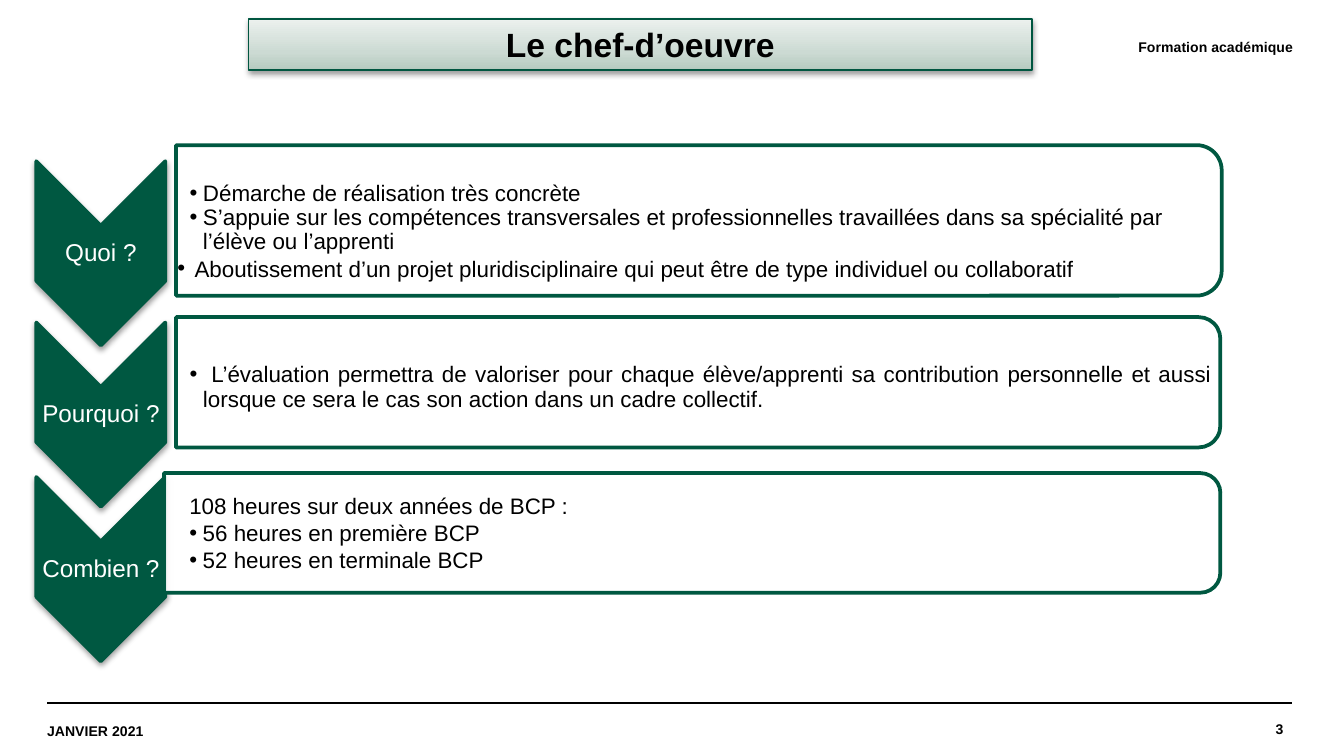
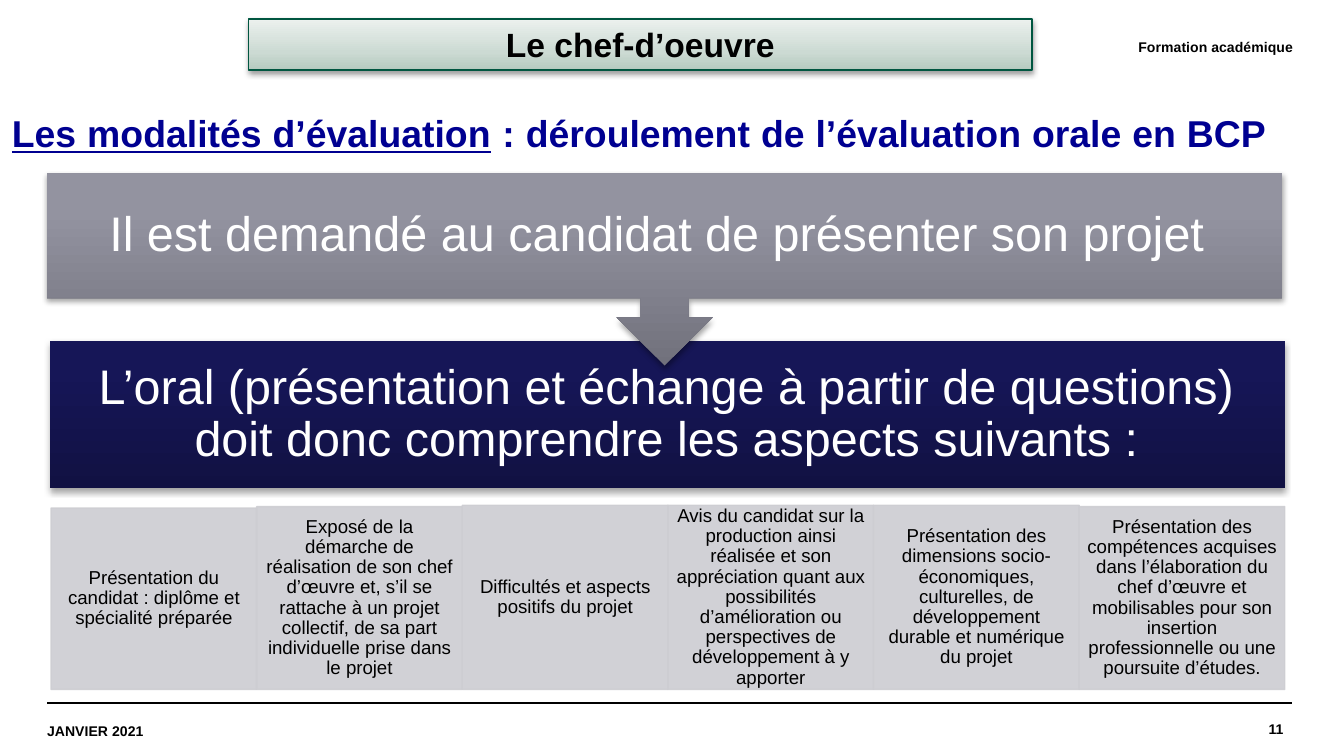
from copy import deepcopy
from dataclasses import dataclass
from typing import Any, NamedTuple, Optional

from lxml import etree
from pptx import Presentation
from pptx.dml.color import RGBColor
from pptx.enum import shapes, text
from pptx.oxml.ns import qn
from pptx.util import Emu, Pt

PX = 9144  # one px is a hundredth of an inch
SLIDE_WIDTH = 1000 * PX
SLIDE_HEIGHT = SLIDE_WIDTH * 9 // 16
SHAPE, ALIGN, ANCHOR = shapes.MSO_SHAPE, text.PP_ALIGN, text.MSO_ANCHOR


@dataclass(frozen=True)
class Theme:
    font: str = "Arial"
    black: str = "000000"
    white: str = "FFFFFF"
    green: str = "005841"
    title_edge: str = "005640"
    blue: str = "000091"
    aspect: str = "CDCDD2"
    title_fill: tuple = ((0, "B6CBC0"), (35, "CCDAD3"), (100, "ECF1EE"))
    navy_fill: tuple = ((0, "111143"), (80, "161657"), (100, "141458"))
    grey_fill: tuple = ((0, "71717C"), (80, "9393A0"), (100, "9393A1"))
    small: float = 7.5
    detail: float = 10
    body: float = 12
    label: float = 13
    title: float = 18
    heading: float = 20
    statement: float = 26


THEME = Theme()


class Box(NamedTuple):
    left: int
    top: int
    width: int
    height: int

    def emu(self) -> list[Emu]:
        return [Emu(value * PX) for value in self]

    def turned(self) -> list[Emu]:
        """Frame that covers this box once rotated by 90 degrees."""
        shift = (self.width - self.height) * PX // 2
        return [Emu(self.left * PX + shift), Emu(self.top * PX - shift),
                Emu(self.height * PX), Emu(self.width * PX)]


class Line(NamedTuple):
    words: str
    margin: int = 0  # hanging bullet when above zero
    hang: int = 0
    spacing: float = 1.0
    align: Any = ALIGN.LEFT


class Style(NamedTuple):
    size: float
    color: str = THEME.black
    bold: bool = False


class Shadow(NamedTuple):
    alpha: int
    distance: int


class Topic(NamedTuple):
    question: str
    arrow_top: int
    panel: Box
    answer: list[Line]
    top_inset: int = 9


class Aspect(NamedTuple):
    top: int
    words: str


SOFT, DEEP = Shadow(38, 20000), Shadow(35, 23000)
SMALL = Style(THEME.small, bold=True)
BODY = Style(THEME.body)
STATEMENT = Style(THEME.statement, THEME.white)

# Content
TOPICS = [
    Topic("Quoi ?", 120, Box(131, 108, 778, 112), [
        Line("Démarche de réalisation très concrète", 19, 10, 0.9),
        Line("S’appuie sur les compétences transversales et professionnelles "
             "travaillées dans sa spécialité par l’élève ou l’apprenti", 19, 10, 0.9),
        Line(" Aboutissement d’un projet pluridisciplinaire qui peut être "
             "de type individuel ou collaboratif", 9, 9)], 18),
    Topic("Pourquoi ?", 240, Box(131, 236, 777, 97), [
        Line(" L’évaluation permettra de valoriser pour chaque élève/apprenti sa "
             "contribution personnelle et aussi lorsque ce sera le cas son action "
             "dans un cadre collectif.", 19, 10, 0.9, ALIGN.JUSTIFY)]),
    Topic("Combien ?", 355, Box(122, 352, 786, 89), []),
]
HOURS = [
    Line("108 heures sur deux années de BCP : ", align=ALIGN.JUSTIFY),
    Line("56 heures en première BCP", 10, 10, align=ALIGN.JUSTIFY),
    Line("52 heures en terminale BCP", 10, 10, align=ALIGN.JUSTIFY),
]
ASPECTS = [
    Aspect(378, "Présentation du candidat : diplôme et spécialité préparée"),
    Aspect(377, "Exposé de la démarche de réalisation de son chef d’œuvre et, s’il se "
                "rattache à un projet collectif, de sa part individuelle prise dans le projet"),
    Aspect(376, "Difficultés et aspects positifs du projet"),
    Aspect(376, "Avis du candidat sur la production ainsi réalisée et son appréciation "
                "quant aux possibilités d’amélioration ou perspectives de développement "
                "à y apporter"),
    Aspect(376, "Présentation des dimensions socio-économiques, culturelles, de "
                "développement durable et numérique du projet"),
    Aspect(377, "Présentation des compétences acquises dans l’élaboration du chef d’œuvre "
                "et mobilisables pour son insertion professionnelle ou une poursuite d’études."),
]


# Drawing helpers
def assign(target: Any, values: dict[str, Any]) -> None:
    for name, value in values.items():
        setattr(target, name, value)


def add_alpha(parent: Any, percent: int) -> None:
    for color in parent.iter(qn("a:srgbClr")):
        etree.SubElement(color, qn("a:alpha"), val=str(percent * 1000))


def paint(shape: Any, fill: Any, edge: Optional[str] = None, edge_width: float = 0.75,
          alpha: int = 100, shadow: Optional[Shadow] = None) -> None:
    """Fill with one colour or gradient stops, then set edge and shadow."""
    properties = shape._element.spPr
    if isinstance(fill, str):
        shape.fill.solid()
        shape.fill.fore_color.rgb = RGBColor.from_string(fill)
        if alpha < 100:
            add_alpha(properties.find(qn("a:solidFill")), alpha)
    else:
        shape.fill.gradient()
        shape.fill.gradient_angle = 90
        stops = properties.find(qn("a:gradFill")).find(qn("a:gsLst"))
        stops.append(deepcopy(stops[-1]))
        for stop, (position, color) in zip(shape.fill.gradient_stops, fill):
            stop.position = position / 100
            stop.color.rgb = RGBColor.from_string(color)
    if edge:
        shape.line.color.rgb = RGBColor.from_string(edge)
        shape.line.width = Pt(edge_width)
    else:
        shape.line.fill.background()
    shape.shadow.inherit = False
    if shadow:
        outer = etree.SubElement(properties.find(qn("a:effectLst")), qn("a:outerShdw"),
                                 blurRad="40000", dist=str(shadow.distance),
                                 dir="5400000", rotWithShape="0")
        etree.SubElement(outer, qn("a:srgbClr"), val=THEME.black)
        add_alpha(outer, shadow.alpha)


def add_run(paragraph: Any, words: str, style: Style, underline: bool = False) -> None:
    run = paragraph.add_run()
    run.text = words
    assign(run.font, {"name": THEME.font, "size": Pt(style.size),
                      "bold": style.bold, "underline": underline})
    run.font.color.rgb = RGBColor.from_string(style.color)


def write(shape: Any, lines: list[Line], style: Style,
          insets: tuple[int, int, int, int] = (0, 0, 0, 0), upright: bool = False) -> None:
    """Write lines; insets run left, top, right, bottom."""
    frame = shape.text_frame
    sides = ("margin_left", "margin_top", "margin_right", "margin_bottom")
    assign(frame, {"word_wrap": True, "vertical_anchor": ANCHOR.MIDDLE,
                   **{side: Emu(inset * PX) for side, inset in zip(sides, insets)}})
    if upright:
        frame._txBody.bodyPr.set("vert", "vert270")
    for index, line in enumerate(lines):
        paragraph = frame.add_paragraph() if index else frame.paragraphs[0]
        if line.margin:
            layout = paragraph._p.get_or_add_pPr()
            layout.set("marL", str(line.margin * PX))
            layout.set("indent", str(-line.hang * PX))
            etree.SubElement(layout, qn("a:buFont"), typeface=THEME.font)
            etree.SubElement(layout, qn("a:buChar"), char="•")
        assign(paragraph, {"alignment": line.align, "line_spacing": line.spacing})
        add_run(paragraph, line.words, style)


def centred(words: str) -> list[Line]:
    return [Line(words, spacing=0.9, align=ALIGN.CENTER)]


# Shared frame of both slides
def add_frame(deck: Any, number: int) -> Any:
    slide = deck.slides.add_slide(deck.slide_layouts[6])
    for left in (35, 39):
        rule = slide.shapes.add_connector(
            shapes.MSO_CONNECTOR.STRAIGHT,
            *[Emu(value * PX) for value in (left, 523, left + 922, 523)])
        rule.line.color.rgb = RGBColor.from_string(THEME.black)
        rule.line.width = Pt(0.8)
        etree.SubElement(rule._element.spPr, qn("a:effectLst"))
    for box, words, align, bottom in (
            (Box(807, 523, 148, 39), str(number), ALIGN.RIGHT, 0),
            (Box(35, 525, 128, 38), "JANVIER 2021", ALIGN.LEFT, 0),
            (Box(319, 21, 643, 39), "Formation académique", ALIGN.RIGHT, 11)):
        note = slide.shapes.add_textbox(*box.emu())
        write(note, [Line(words, align=align)], SMALL, (0, 0, 0, bottom))
    title = slide.shapes.add_shape(SHAPE.RECTANGLE, *Box(185, 14, 583, 38).emu())
    paint(title, THEME.title_fill, THEME.title_edge, shadow=SOFT)
    write(title, [Line("Le chef-d’oeuvre", align=ALIGN.CENTER)],
          Style(THEME.title, bold=True), (7, 4, 7, 4))
    return slide


# Slide 3: what, why, how much
def add_topic(slide: Any, topic: Topic) -> None:
    arrow = slide.shapes.add_shape(SHAPE.CHEVRON, *Box(27, topic.arrow_top, 96, 137).turned())
    panel = slide.shapes.add_shape(SHAPE.ROUND_2_SAME_RECTANGLE, *topic.panel.turned())
    arrow.rotation = panel.rotation = 90
    arrow.adjustments[0] = 0.5
    panel.adjustments[0], panel.adjustments[1] = 0.167, 0
    paint(arrow, THEME.green, THEME.green, 2, shadow=SOFT)
    paint(panel, THEME.white, THEME.green, 2, alpha=90)
    write(arrow, centred(topic.question), Style(THEME.label, THEME.white),
          (1, 1, 1, 1), upright=True)
    if topic.answer:
        write(panel, topic.answer, BODY, (topic.top_inset, 1, 1, 1), upright=True)


def build_topics(deck: Any) -> None:
    slide = add_frame(deck, 3)
    for topic in TOPICS:
        add_topic(slide, topic)
    hours = slide.shapes.add_shape(SHAPE.RECTANGLE, *Box(131, 356, 582, 70).emu())
    paint(hours, THEME.white)
    write(hours, HOURS, BODY, (10, 11, 10, 0))


# Slide 11: course of the oral
def build_oral(deck: Any) -> None:
    slide = add_frame(deck, 11)
    heading = slide.shapes.add_textbox(*Box(-1, 77, 953, 44).emu())
    write(heading, [], BODY, (10, 5, 10, 5))
    paragraph = heading.text_frame.paragraphs[0]
    paragraph.alignment = ALIGN.JUSTIFY
    style = Style(THEME.heading, THEME.blue, True)
    add_run(paragraph, "Les modalités d’évaluation", style, underline=True)
    add_run(paragraph, " : déroulement de l’évaluation orale en BCP ", style)

    oral = slide.shapes.add_shape(SHAPE.RECTANGLE, *Box(37, 254, 919, 109).emu())
    paint(oral, THEME.navy_fill, shadow=DEEP)
    write(oral, centred("L’oral (présentation et échange à partir de questions) "
                        "doit donc comprendre les aspects suivants :"),
          STATEMENT, (20, 20, 20, 20))

    width, bottom = 153, 513
    for column, aspect in enumerate(ASPECTS):
        box = Box(38 + column * width, aspect.top, width, bottom - aspect.top)
        cell = slide.shapes.add_shape(SHAPE.RECTANGLE, *box.emu())
        paint(cell, THEME.aspect, THEME.aspect, alpha=90)
        add_alpha(cell._element.spPr.find(qn("a:ln")), 90)
        write(cell, centred(aspect.words), Style(THEME.detail), (5, 1, 5, 1))

    request = slide.shapes.add_shape(SHAPE.DOWN_ARROW_CALLOUT, *Box(35, 129, 919, 143).emu())
    for index, value in enumerate((0.25, 0.25, 0.25, 0.65)):
        request.adjustments[index] = value
    paint(request, THEME.grey_fill, shadow=DEEP)
    write(request, centred("Il est demandé au candidat de présenter son projet "),
          STATEMENT, (20, 20, 20, 20))


def main() -> None:
    deck = Presentation()
    assign(deck, {"slide_width": Emu(SLIDE_WIDTH), "slide_height": Emu(SLIDE_HEIGHT)})
    build_topics(deck)
    build_oral(deck)
    deck.save("out.pptx")


if __name__ == "__main__":
    main()
